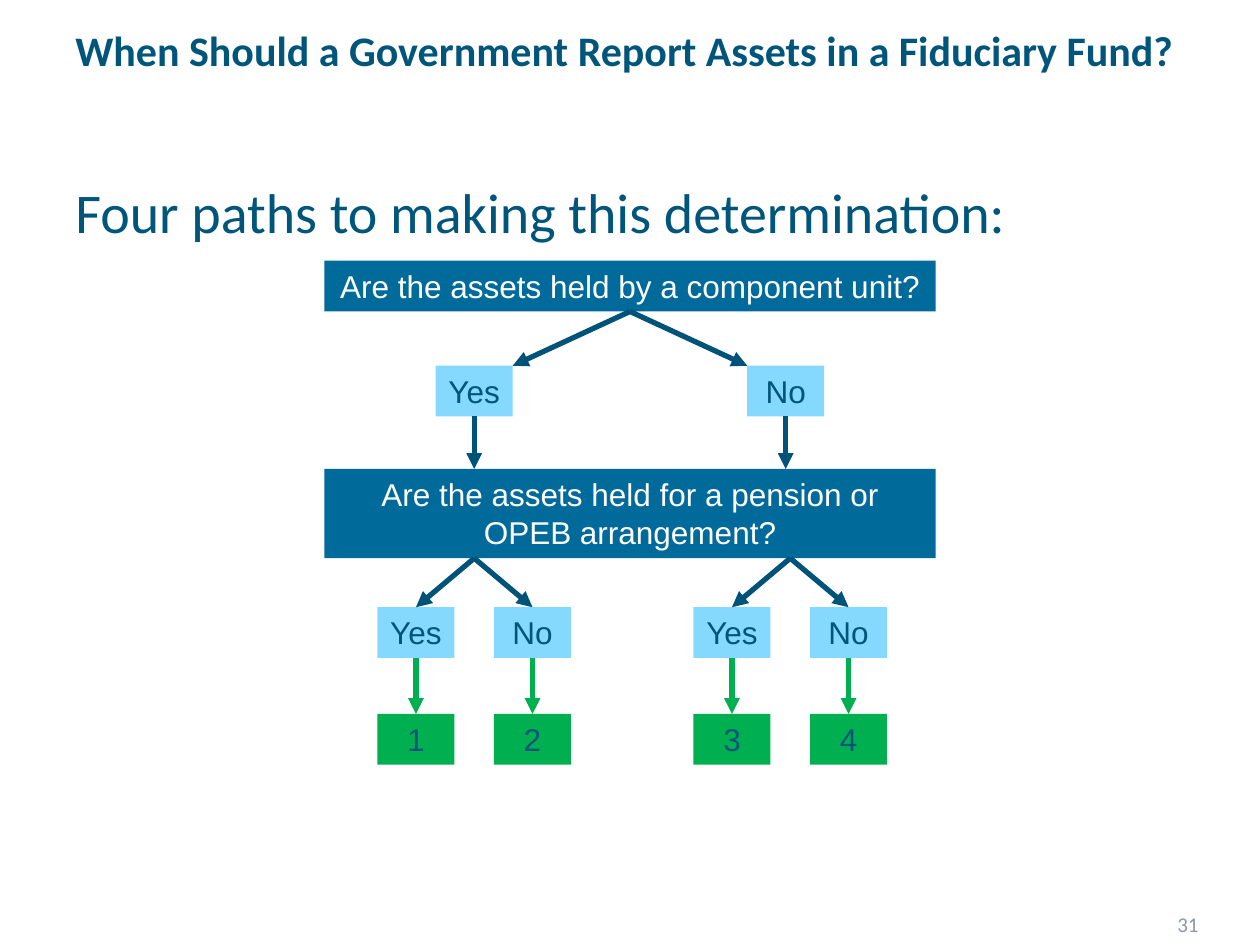
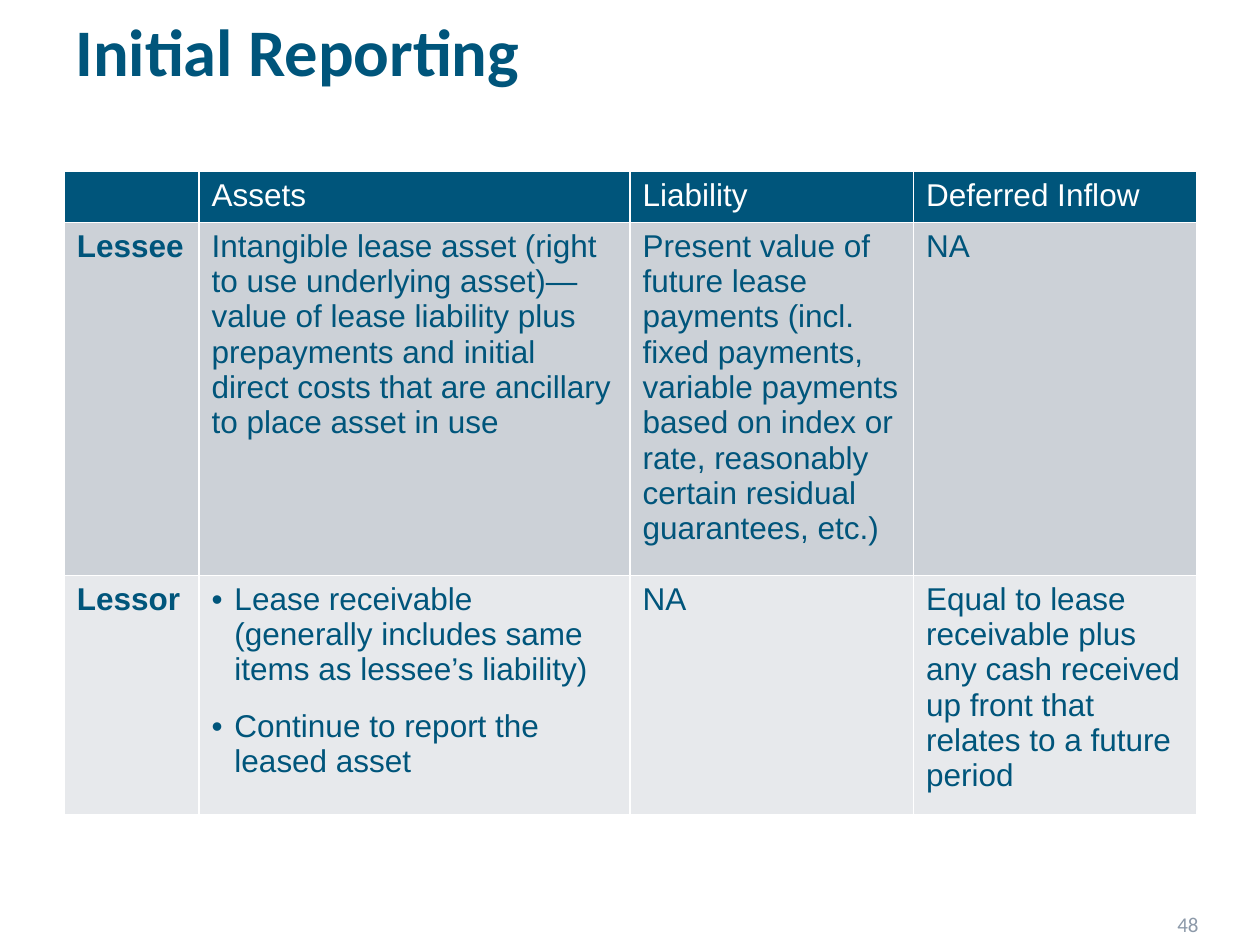
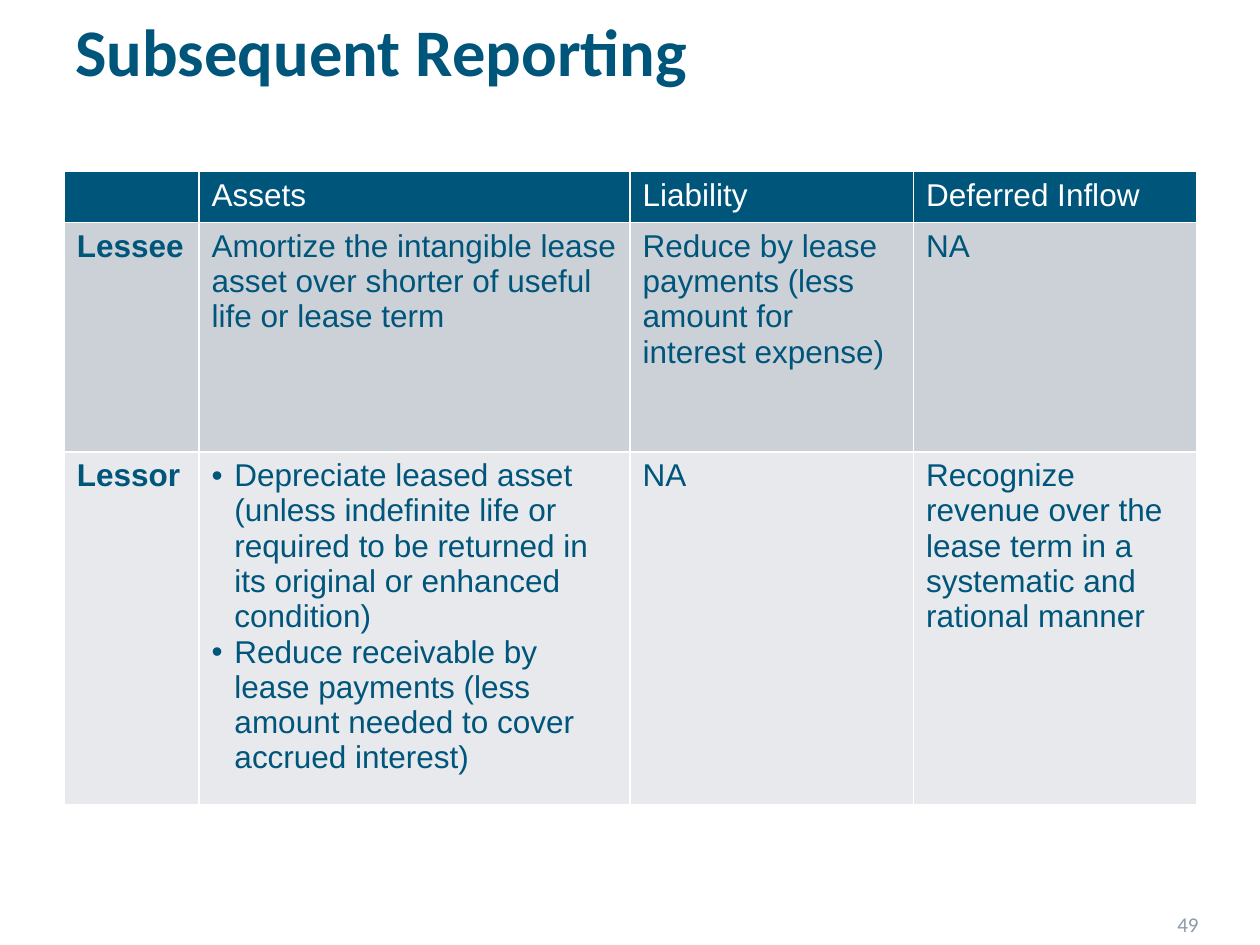
from dataclasses import dataclass

from lxml import etree
from pptx import Presentation
from pptx.dml.color import RGBColor
from pptx.enum.shapes import MSO_CONNECTOR, MSO_SHAPE
from pptx.enum.text import MSO_ANCHOR, MSO_AUTO_SIZE, PP_ALIGN
from pptx.oxml.ns import qn
from pptx.util import Pt

RECT = MSO_SHAPE.RECTANGLE
LINE = MSO_CONNECTOR.STRAIGHT
LEFT, MID, RIGHT = PP_ALIGN.LEFT, PP_ALIGN.CENTER, PP_ALIGN.RIGHT
TOP, CENTRE = MSO_ANCHOR.TOP, MSO_ANCHOR.MIDDLE
GROW = MSO_AUTO_SIZE.SHAPE_TO_FIT_TEXT


@dataclass(frozen=True)
class Theme:
    ink: str = "00557B"
    ask: str = "006B9B"
    reply: str = "85D9FF"
    arrow: str = "005378"
    goal: str = "00B050"
    white: str = "FFFFFF"
    grey: str = "8C99A9"
    bands: tuple = ("00557B", "CCD1D7", "E7E9EC")
    head: str = "Calibri"
    text: str = "Arial"
    big: int = 38
    lead: int = 32
    small: int = 24
    base: int = 18
    foot: int = 12


T = Theme()

# Content
PATHS = {
    "page": "31",
    "title": "When Should a Government Report Assets in a Fiduciary Fund?",
    "lead": "Four paths to making this determination:",
    "asks": ("Are the assets held by a component unit?",
             "Are the assets held for a pension or OPEB arrangement?"),
    "replies": ("Yes", "No"),
}
HEADS = ("", "Assets", "Liability", "Deferred Inflow")
REPORTS = [
    {
        "page": "48", "title": "Initial Reporting",
        "high": 357.84, "rows": (29.2, 29.2, 29.2), "gap": 12,
        "cells": [
            ("Lessee",
             "Intangible lease asset (right to use underlying asset)—value of lease "
             "liability plus prepayments and initial direct costs that are ancillary "
             "to place asset in use",
             "Present value of future lease payments (incl. fixed payments, variable "
             "payments based on index or rate, reasonably certain residual "
             "guarantees, etc.)",
             "NA"),
            ("Lessor",
             ["Lease receivable (generally includes same items as lessee’s liability)",
              "Continue to report the leased asset"],
             "NA",
             "Equal to lease receivable plus any cash received up front that relates "
             "to a future period"),
        ],
    },
    {
        "page": "49", "title": "Subsequent Reporting",
        "high": 362.16, "rows": (29.2, 131, 179.3), "gap": 0,
        "cells": [
            ("Lessee",
             "Amortize the intangible lease asset over shorter of useful life or "
             "lease term",
             "Reduce by lease payments (less amount for interest expense)",
             "NA"),
            ("Lessor",
             ["Depreciate leased asset (unless indefinite life or required to be "
              "returned in its original or enhanced condition)",
              "Reduce receivable by lease payments (less amount needed to cover "
              "accrued interest)"],
             "NA",
             "Recognize revenue over the lease term in a systematic and rational "
             "manner"),
        ],
    },
]

# Layout
WIDE, HIGH = 720, 540
TITLE = (36, 0, 648, 56.9)
LEAD = (36, 98, 648, 339)
PAGE = (507, 516.2, 185, 23.8)
COLS = (77, 246.2, 162, 162)
GRID = (36.8, 98)
INDENT = 13
ASK_W, BOX_W, BOX_H = 349.2, 44, 29
ASK1, REPLY1, ASK2, REPLY2, GOAL = 149, 209, 268, 347, 408
ASK2_H = 51
REPLY_X = (271, 449)
FORK_X = (271, 451.6)
SPREAD = 33.3


def rgb(code):
    return RGBColor.from_string(code)


def write(para, text, size, font, ink, bold=False):
    run = para.add_run()
    run.text = text
    run.font.size = Pt(size)
    run.font.name = font
    run.font.bold = bold
    run.font.color.rgb = rgb(ink)


def label(slide, place, text, size, ink, align=LEFT, anchor=CENTRE, bold=False):
    frame = slide.shapes.add_textbox(*map(Pt, place)).text_frame
    frame.word_wrap = True
    frame.vertical_anchor = anchor
    para = frame.paragraphs[0]
    para.alignment = align
    write(para, text, size, T.head, ink, bold)


def start(deck, data, size):
    """Add a slide with its title and page number."""
    slide = deck.slides.add_slide(deck.slide_layouts[6])
    label(slide, PAGE, data["page"], T.foot, T.grey, RIGHT)
    label(slide, TITLE, data["title"], size, T.ink, bold=True)
    return slide


def box(slide, mid, top, text, fill, ink=T.ink, wide=BOX_W, high=BOX_H):
    shape = slide.shapes.add_shape(
        RECT, Pt(mid - wide / 2), Pt(top), Pt(wide), Pt(high))
    shape.shadow.inherit = False
    shape.fill.solid()
    shape.fill.fore_color.rgb = rgb(fill)
    shape.line.fill.background()
    frame = shape.text_frame
    frame.word_wrap = True
    frame.auto_size = GROW
    frame.vertical_anchor = TOP
    para = frame.paragraphs[0]
    para.alignment = MID
    write(para, text, T.base, T.text, ink)


def arrow(slide, x1, y1, x2, y2, ink=T.arrow):
    link = slide.shapes.add_connector(LINE, Pt(x1), Pt(y1), Pt(x2), Pt(y2))
    link.line.color.rgb = rgb(ink)
    link.line.width = Pt(3)
    etree.SubElement(link.line._get_or_add_ln(), qn("a:tailEnd"), type="triangle")
    etree.SubElement(link._element.spPr, qn("a:effectLst"))


def draw_paths(deck):
    slide = start(deck, PATHS, T.small)
    label(slide, LEAD, PATHS["lead"], T.lead, T.ink, anchor=TOP)
    mid = WIDE / 2
    ask1, ask2 = PATHS["asks"]
    box(slide, mid, ASK1, ask1, T.ask, T.white, ASK_W)
    box(slide, mid, ASK2, ask2, T.ask, T.white, ASK_W, ASK2_H)
    sides = (-1, 1)
    for side, x, text in zip(sides, REPLY_X, PATHS["replies"]):
        box(slide, x, REPLY1, text, T.reply)
        arrow(slide, mid, ASK1 + BOX_H, x - side * BOX_W / 2, REPLY1)
        arrow(slide, x, REPLY1 + BOX_H, x, ASK2)
    goal = 0
    for fork in FORK_X:
        for side, text in zip(sides, PATHS["replies"]):
            goal += 1
            x = fork + side * SPREAD
            box(slide, x, REPLY2, text, T.reply)
            box(slide, x, GOAL, str(goal), T.goal)
            arrow(slide, fork, ASK2 + ASK2_H, x, REPLY2)
            arrow(slide, x, REPLY2 + BOX_H, x, GOAL, T.goal)


def border(cell):
    props = cell._tc.get_or_add_tcPr()
    for side in ("lnL", "lnR", "lnT", "lnB"):
        edge = etree.SubElement(props, qn("a:" + side), w=str(Pt(1)))
        fill = etree.SubElement(edge, qn("a:solidFill"))
        etree.SubElement(fill, qn("a:srgbClr"), val=T.white)


def bullet(para):
    props = para._p.get_or_add_pPr()
    props.set("marL", str(Pt(INDENT)))
    props.set("indent", str(-Pt(INDENT)))
    etree.SubElement(props, qn("a:buFont"), typeface=T.text)
    etree.SubElement(props, qn("a:buChar"), char="•")


def fill_cell(cell, text, band, ink, bold, gap):
    """Style a cell; a list becomes bullets, with gap between them."""
    border(cell)
    cell.fill.solid()
    cell.fill.fore_color.rgb = rgb(band)
    items = text if isinstance(text, list) else [text]
    for i, item in enumerate(items):
        frame = cell.text_frame
        para = frame.add_paragraph() if i else frame.paragraphs[0]
        if items is text:
            bullet(para)
            if gap and i < len(items) - 1:
                para.space_after = Pt(gap)
        if item:
            write(para, item, T.base, T.text, ink, bold)


def draw_report(deck, data):
    slide = start(deck, data, T.big)
    rows = [HEADS, *data["cells"]]
    shape = slide.shapes.add_table(
        len(rows), len(COLS), *map(Pt, (*GRID, sum(COLS), data["high"])))
    table = shape.table
    table.horz_banding = False
    for col, wide in zip(table.columns, COLS):
        col.width = Pt(wide)
    for row, high in zip(table.rows, data["rows"]):
        row.height = Pt(high)
    shape.height = Pt(data["high"])
    for r, row in enumerate(rows):
        ink = T.ink if r else T.white
        for c, text in enumerate(row):
            fill_cell(table.cell(r, c), text, T.bands[r], ink, c == 0, data["gap"])


def main():
    deck = Presentation()
    deck.slide_width, deck.slide_height = Pt(WIDE), Pt(HIGH)
    draw_paths(deck)
    for data in REPORTS:
        draw_report(deck, data)
    deck.save("out.pptx")


if __name__ == "__main__":
    main()
